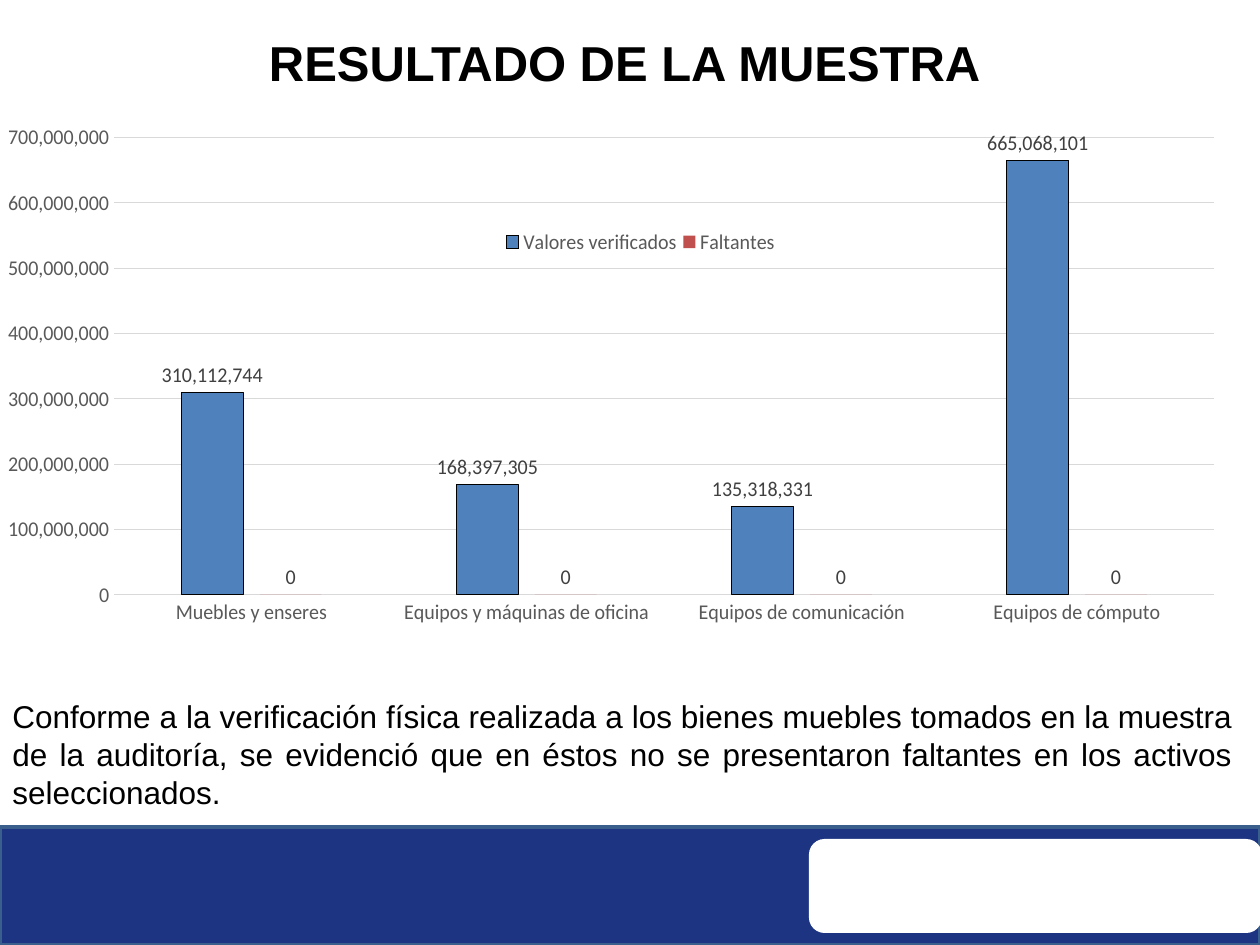
from dataclasses import dataclass

from lxml import etree
from pptx import Presentation
from pptx.chart.data import CategoryChartData
from pptx.dml.color import RGBColor
from pptx.enum.chart import XL_CHART_TYPE, XL_LABEL_POSITION, XL_LEGEND_POSITION, XL_TICK_MARK
from pptx.enum.shapes import MSO_SHAPE
from pptx.enum.text import MSO_ANCHOR, PP_ALIGN
from pptx.oxml.ns import qn
from pptx.util import Emu, Pt

RECTANGLE, ROUNDED = MSO_SHAPE.RECTANGLE, MSO_SHAPE.ROUNDED_RECTANGLE
CENTER, JUSTIFY = PP_ALIGN.CENTER, PP_ALIGN.JUSTIFY
TOP = MSO_ANCHOR.TOP
COLUMNS = XL_CHART_TYPE.COLUMN_CLUSTERED
LEGEND_RIGHT = XL_LEGEND_POSITION.RIGHT
OUTSIDE_END = XL_LABEL_POSITION.OUTSIDE_END
NO_TICK = XL_TICK_MARK.NONE

EMU_PER_PX = 914400 / 126
NUMBER_FORMAT = "#,##0"
COLORS = {
    "white": "FFFFFF", "black": "000000", "navy": "1C3481", "edge": "3A5F8C",
    "grid": "D9D9D9", "axis": "595959", "label": "404040",
    "verified": "4F81BD", "missing": "C0504D",
}


@dataclass
class Box:
    left: int
    top: int
    width: int
    height: int

    def emu(self) -> list[Emu]:
        return [px(value) for value in (self.left, self.top, self.width, self.height)]


@dataclass
class Panel:
    box: Box
    kind: int
    fill: str
    line: str | None = None


@dataclass
class Message:
    box: Box
    text: str
    size: int
    align: int
    bold: bool = False


@dataclass
class Series:
    name: str
    values: tuple[int, ...]
    fill: str
    line: str | None = None


PANELS = [
    Panel(Box(0, 827, 1260, 118), RECTANGLE, "navy", "edge"),
    Panel(Box(809, 839, 453, 94), ROUNDED, "white"),
]
MESSAGES = [
    Message(Box(4, 26, 1241, 72), "RESULTADO DE LA MUESTRA", 28, CENTER, True),
    Message(
        Box(0, 691, 1245, 127),
        "Conforme a la verificación física realizada a los bienes muebles tomados en la "
        "muestra de la auditoría, se evidenció que en éstos no se presentaron faltantes "
        "en los activos seleccionados.",
        18, JUSTIFY,
    ),
]
CHART_BOX = Box(8, 125, 1230, 566)
CATEGORIES = ["Muebles y enseres", "Equipos y máquinas de oficina",
              "Equipos de comunicación", "Equipos de cómputo"]
SERIES = [
    Series("Valores verificados", (310112744, 168397305, 135318331, 665068101), "verified", "black"),
    Series("Faltantes", (0, 0, 0, 0), "missing"),
]
PLOT_LAYOUT = {"x": 0.04, "y": 0.02, "w": 0.94, "h": 0.81}
LEGEND_LAYOUT = {"x": 0.37, "y": 0.18, "w": 0.24, "h": 0.05}


def px(value: int) -> Emu:
    return Emu(round(value * EMU_PER_PX))


def color(name: str) -> RGBColor:
    return RGBColor.from_string(COLORS[name])


def apply(target, values: dict) -> None:
    for name, value in values.items():
        setattr(target, name, value)


def style_font(font, size: int, name: str, tint: str, bold: bool = False) -> None:
    apply(font, {"size": Pt(size), "name": name, "bold": bold})
    font.color.rgb = color(tint)


def style_fill(fill, tint: str) -> None:
    fill.solid()
    fill.fore_color.rgb = color(tint)


def style_line(line, tint: str | None, width: float = 0.75) -> None:
    if tint is None:
        line.fill.background()
        return
    line.color.rgb = color(tint)
    line.width = Pt(width)


def draw_panel(slide, panel: Panel) -> None:
    shape = slide.shapes.add_shape(panel.kind, *panel.box.emu())
    shape.shadow.inherit = False
    style_fill(shape.fill, panel.fill)
    style_line(shape.line, panel.line, 2)


def draw_message(slide, message: Message) -> None:
    shape = slide.shapes.add_textbox(*message.box.emu())
    apply(shape.text_frame, {"word_wrap": True, "vertical_anchor": TOP})
    paragraph = shape.text_frame.paragraphs[0]
    apply(paragraph, {"text": message.text, "alignment": message.align})
    style_font(paragraph.runs[0].font, message.size, "Arial", "black", message.bold)


def place_part(part, index: int, layout: dict[str, float], inner: bool = False) -> None:
    for previous in part.findall(qn("c:layout")):
        part.remove(previous)
    holder = etree.Element(qn("c:layout"))
    manual = etree.SubElement(holder, qn("c:manualLayout"))
    settings = {"layoutTarget": "inner"} if inner else {}
    settings |= {"xMode": "edge", "yMode": "edge"} | layout
    for name, value in settings.items():
        etree.SubElement(manual, qn(f"c:{name}"), val=str(value))
    part.insert(index, holder)


def style_axis(axis, line: str | None) -> None:
    apply(axis, {"major_tick_mark": NO_TICK, "minor_tick_mark": NO_TICK})
    style_font(axis.tick_labels.font, 12, "Calibri", "axis")
    style_line(axis.format.line, line)


def draw_chart(slide) -> None:
    data = CategoryChartData(number_format=NUMBER_FORMAT)
    data.categories = CATEGORIES
    for series in SERIES:
        data.add_series(series.name, series.values)
    chart = slide.shapes.add_chart(COLUMNS, *CHART_BOX.emu(), data).chart
    apply(chart, {"has_title": False, "has_legend": True})
    style_font(chart.font, 10, "Calibri", "black")

    plot = chart.plots[0]
    apply(plot, {"gap_width": 219, "overlap": -27, "vary_by_categories": False})
    for drawn, series in zip(plot.series, SERIES):
        style_fill(drawn.format.fill, series.fill)
        style_line(drawn.format.line, series.line)
        labels = drawn.data_labels
        apply(labels, {"show_value": True, "position": OUTSIDE_END,
                       "number_format": NUMBER_FORMAT, "number_format_is_linked": False})
        style_font(labels.font, 12, "Calibri", "label")

    style_axis(chart.category_axis, "grid")
    value_axis = chart.value_axis
    style_axis(value_axis, None)
    apply(value_axis, {"has_major_gridlines": True, "minimum_scale": 0,
                       "maximum_scale": 700_000_000, "major_unit": 100_000_000})
    apply(value_axis.tick_labels, {"number_format": NUMBER_FORMAT, "number_format_is_linked": False})
    style_line(value_axis.major_gridlines.format.line, "grid")

    legend = chart.legend
    apply(legend, {"position": LEGEND_RIGHT, "include_in_layout": False})
    style_font(legend.font, 12, "Calibri", "axis")
    place_part(legend._element, 1, LEGEND_LAYOUT)
    place_part(chart._chartSpace.chart.plotArea, 0, PLOT_LAYOUT, inner=True)


def main() -> None:
    presentation = Presentation()
    apply(presentation, {"slide_width": px(1260), "slide_height": px(945)})
    slide = presentation.slides.add_slide(presentation.slide_layouts[6])
    style_fill(slide.background.fill, "white")
    for panel in PANELS:
        draw_panel(slide, panel)
    title, conclusion = MESSAGES
    draw_message(slide, title)
    draw_chart(slide)
    draw_message(slide, conclusion)
    presentation.save("out.pptx")


if __name__ == "__main__":
    main()
